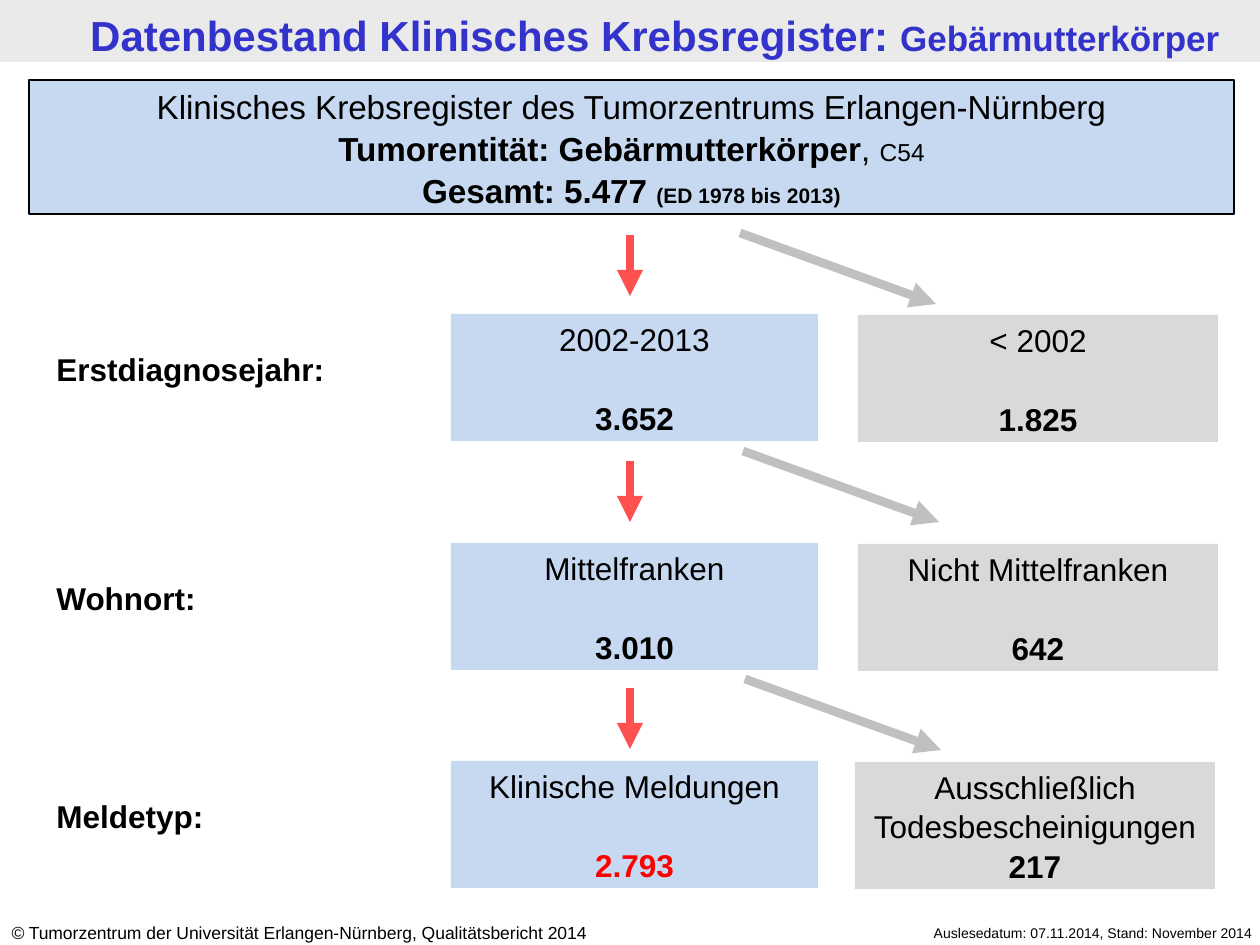
"""Build the cancer registry flow slide for Gebärmutterkörper."""
from lxml.etree import SubElement
from pptx import Presentation
from pptx.dml.color import RGBColor
from pptx.enum.shapes import MSO_CONNECTOR, MSO_SHAPE
from pptx.enum.text import MSO_ANCHOR, PP_ALIGN
from pptx.oxml.ns import qn
from pptx.util import Pt

PX = 914400 // 126
LEFT, MID, RIGHT = PP_ALIGN.LEFT, PP_ALIGN.CENTER, PP_ALIGN.RIGHT
BLUE, GREY, BLACK = "C6D9F1", "D9D9D9", "000000"

deck = Presentation()
deck.slide_width, deck.slide_height = 1260 * PX, 945 * PX
slide = deck.slides.add_slide(deck.slide_layouts[6])


def add_box(area, paras, fill=None, line=None, align=MID, gap=0):
    """Each run is (text, size, bold, colour); the gap precedes the last paragraph."""
    area = [n * PX for n in area]
    if fill:
        box = slide.shapes.add_shape(MSO_SHAPE.RECTANGLE, *area)
        box.shadow.inherit = False
        box.fill.solid()
        box.fill.fore_color.rgb = RGBColor.from_string(fill)
        if line:
            box.line.color.rgb = RGBColor.from_string(line)
            box.line.width = Pt(0.75)
        else:
            box.line.fill.background()
    else:
        box = slide.shapes.add_textbox(*area)
    frame = box.text_frame
    frame.word_wrap = True
    frame.vertical_anchor = MSO_ANCHOR.MIDDLE if fill else MSO_ANCHOR.TOP
    for i, runs in enumerate(paras):
        para = frame.add_paragraph() if i else frame.paragraphs[0]
        para.alignment = align
        para.line_spacing = 1.05
        if gap and i == len(paras) - 1:
            para.space_before = Pt(gap)
        for text, size, bold, color in runs:
            run = para.add_run()
            run.text = text
            font = run.font
            font.name, font.size, font.bold = "Arial", Pt(size), bold
            font.color.rgb = RGBColor.from_string(color)
    return box


def add_arrow(x, y, dx, dy, color):
    line = slide.shapes.add_connector(
        MSO_CONNECTOR.STRAIGHT, x * PX, y * PX, (x + dx) * PX, (y + dy) * PX)
    line.line.color.rgb = RGBColor.from_string(color)
    line.line.width = Pt(5)
    SubElement(line.line._get_or_add_ln(), qn("a:tailEnd"), type="triangle")
    SubElement(line._element.spPr, qn("a:effectLst"))


add_box((0, 0, 1260, 62), [], "EAEAEA")
add_box((50, 1, 1210, 62), [[
    ("Datenbestand Klinisches Krebsregister: ", 24, True, "3333CC"),
    ("Gebärmutterkörper", 20, True, "3333CC")]])
add_box((29, 80, 1205, 134), [
    [("Klinisches Krebsregister des Tumorzentrums Erlangen-Nürnberg", 19, False, BLACK)],
    [("Tumorentität: Gebärmutterkörper", 19, True, BLACK),
     (", ", 19, False, BLACK), ("C54", 14, False, BLACK)],
    [("Gesamt: 5.477 ", 19, True, BLACK), ("(ED 1978 bis 2013)", 12, True, BLACK)],
], BLUE, BLACK)

steps = [
    ("Erstdiagnosejahr:", 314, 235, (740, 233), "2002-2013", "3.652", BLACK,
     858, "< 2002", "1.825", 22),
    ("Wohnort:", 543, 461, (743, 451), "Mittelfranken", "3.010", BLACK,
     858, "Nicht Mittelfranken", "642", 22),
    ("Meldetyp:", 761, 688, (745, 679), "Klinische Meldungen", "2.793", "FF0000",
     855, "Ausschließlich Todesbescheinigungen", "217", 0),
]
for label, top, down, side, kept, count, color, left, rest, other, gap in steps:
    add_arrow(630, down, 0, 61, "FF5050")
    add_arrow(*side, 196, 71, "C0C0C0")
    add_box((44, top + 28, 348, 50), [[(label, 18, True, BLACK)]], align=LEFT)
    add_box((451, top, 367, 127),
            [[(kept, 18, False, BLACK)], [(count, 18, True, color)]], BLUE, gap=22)
    add_box((left, top + 1, 360, 127),
            [[(rest, 18, False, BLACK)], [(other, 18, True, BLACK)]], GREY, gap=gap)

add_box((838, 918, 427, 30),
        [[("Auslesedatum: 07.11.2014, Stand: November 2014", 8, False, BLACK)]], align=RIGHT)
foot = add_box((-1, 915, 660, 34), [[
    ("©", 10, False, BLACK),
    (" Tumorzentrum der Universität Erlangen-Nürnberg, Qualitätsbericht 2014",
     10, False, BLACK)]], align=LEFT)
foot.text_frame.paragraphs[0].runs[0].font.italic = True

deck.save("out.pptx")
